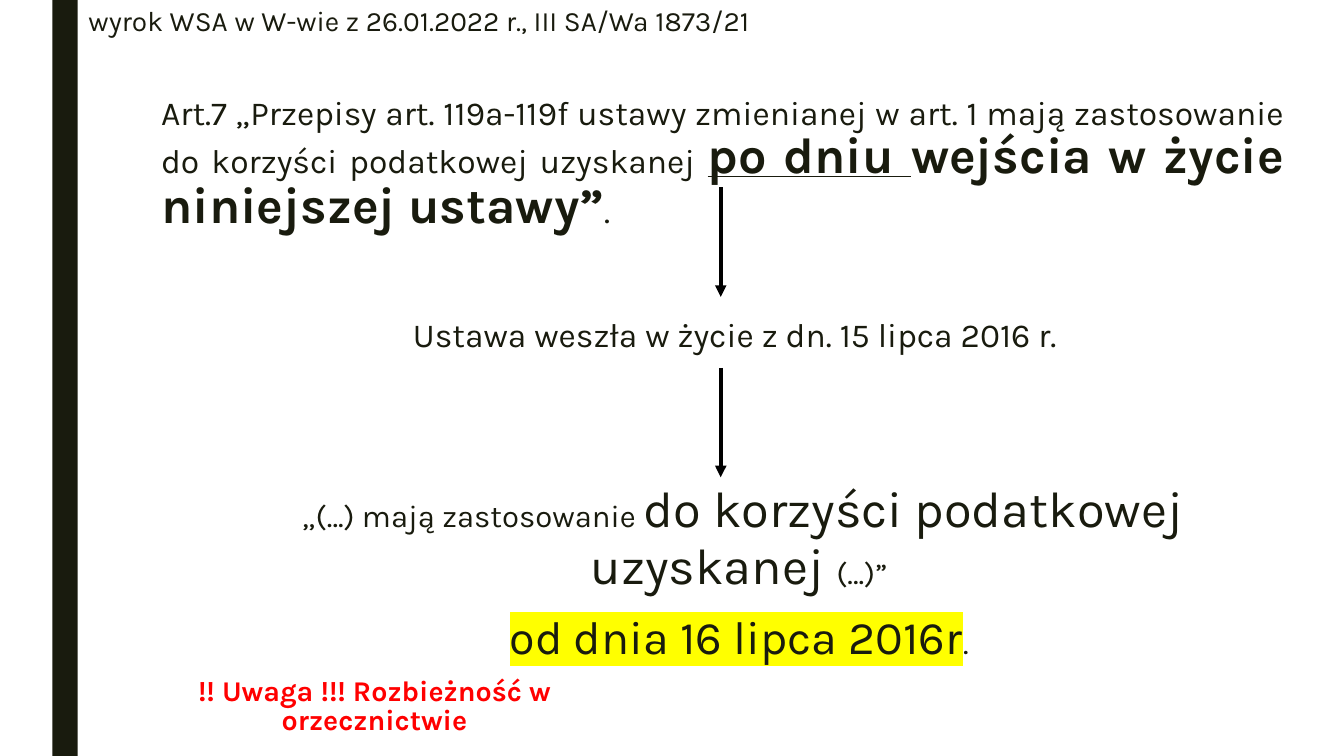
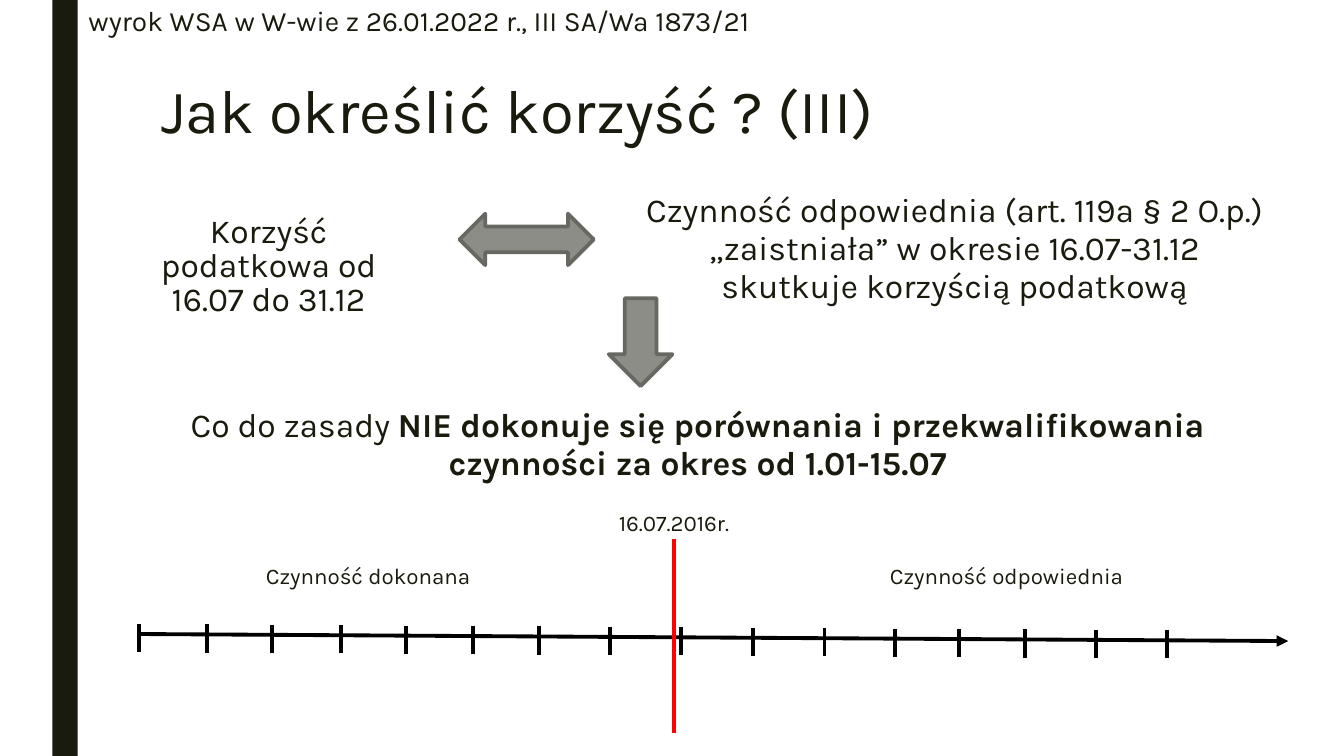
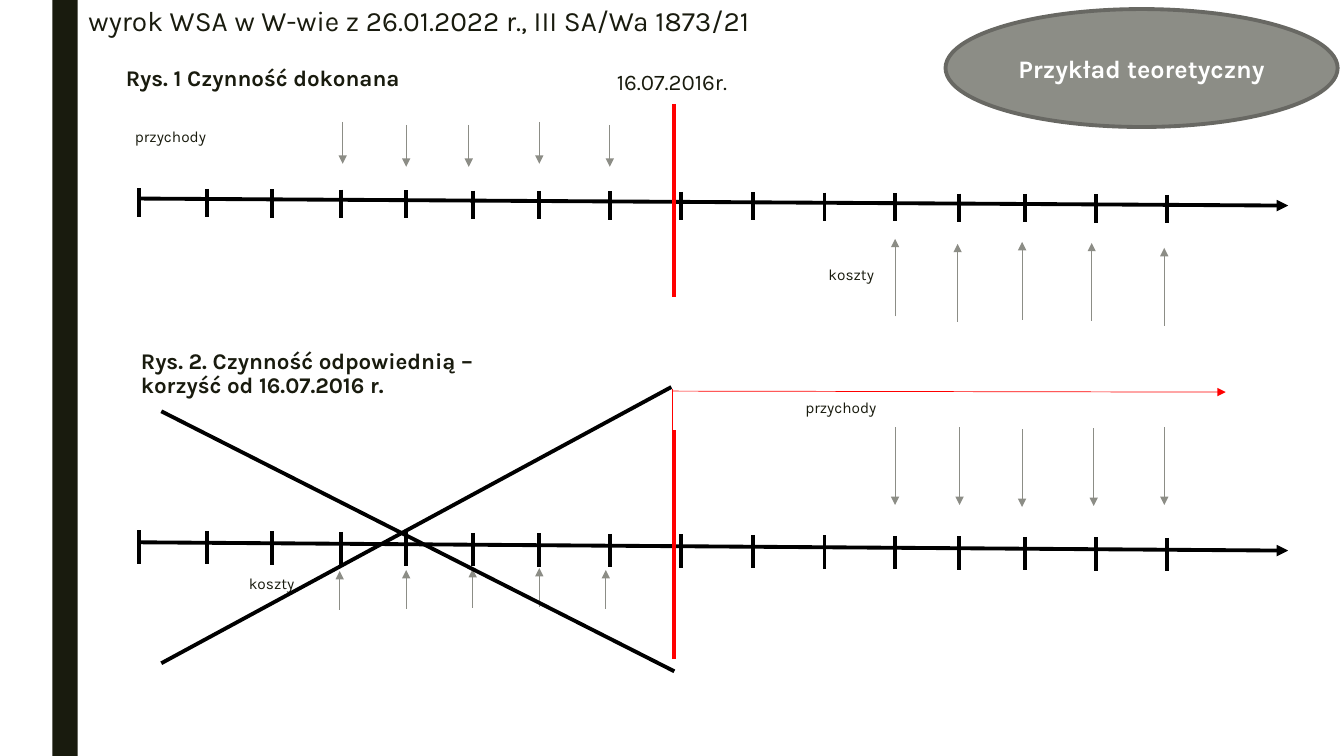
from lxml import etree
from pptx import Presentation, util as u
from pptx.dml.color import RGBColor
from pptx.enum import shapes, text
from pptx.oxml import ns

COLORS = {
    "ink": "191B0E",
    "black": "000000",
    "red": "FF0000",
    "white": "FFFFFF",
    "gray": "8C8D86",
    "outline": "686863",
    "marker": "FFFF00",
}
FONT = "Karla"
GRID = u.Inches(0.1)  # the slide measures 133.33 columns by 75 rows
COLUMNS, ROWS = 133.33, 75
THICK, THIN = 2.75, 0.5
PARAGRAPHS = {
    "body": {"line_spacing": 0.94, "space_before": u.Pt(10), "space_after": u.Pt(2)},
    "tight": {"line_spacing": 0.84, "space_before": u.Pt(10), "space_after": u.Pt(2)},
    "heading": {"line_spacing": 0.89},
    "badge": {},
}
CENTER, JUSTIFY = text.PP_ALIGN.CENTER, text.PP_ALIGN.JUSTIFY
MONTHS = [13.8, 20.5, 27, 33.8, 40.3, 46.9, 53.5, 60.5,
          67.6, 74.7, 81.8, 88.8, 95.1, 101.7, 108.7, 115.8]
AXIS_START, AXIS_END, ENTRY_DATE = 13.8, 127.8, 66.9
RULING = "wyrok WSA w W-wie z 26.01.2022 r., III SA/Wa 1873/21"
DATE = "16.07.2016r."


def rgb(name):
    return RGBColor.from_string(COLORS[name])


def cells(*values):
    return [round(value * GRID) for value in values]


def set_all(target, formats):
    for name, value in formats.items():
        setattr(target, name, value)


class Deck:
    def __init__(self):
        self.prs = Presentation()
        self.prs.slide_width, self.prs.slide_height = cells(COLUMNS, ROWS)
        self.slide = None

    def new_slide(self):
        """Start a slide with the side band and the ruling on top."""
        self.slide = self.prs.slides.add_slide(self.prs.slide_layouts[6])
        self.shape("RECTANGLE", (5.2, 0, 2.5, ROWS), "ink")
        self.text((7.8, 0.1, 105, 39.2), [(RULING, 20)])

    def shape(self, kind, box, fill, outline=None):
        shape = self.slide.shapes.add_shape(
            getattr(shapes.MSO_SHAPE, kind), *cells(*box))
        shape.shadow.inherit = False
        shape.fill.solid()
        shape.fill.fore_color.rgb = rgb(fill)
        if outline:
            shape.line.color.rgb = rgb(outline)
            shape.line.width = u.Pt(THICK)
        else:
            shape.line.fill.background()
        return shape

    def text(self, box, *paragraphs, style="body", align=None, color="ink"):
        """Place paragraphs, each a list of (words, size, optional font formats)."""
        frame = self.slide.shapes.add_textbox(*cells(*box)).text_frame
        frame.word_wrap = True
        self.add_words(frame, paragraphs, style, align, color)

    def add_words(self, frame, paragraphs, style, align, color):
        for index, runs in enumerate(paragraphs):
            paragraph = frame.add_paragraph() if index else frame.paragraphs[0]
            paragraph.alignment = align
            set_all(paragraph, PARAGRAPHS[style])
            for words, size, *formats in runs:
                run = paragraph.add_run()
                run.text = words
                run.font.color.rgb = rgb(color)
                formats = dict(formats[0]) if formats else {}
                marker = formats.pop("marker", None)
                set_all(run.font, {"name": FONT, "size": u.Pt(size), **formats})
                if marker:
                    self.highlight(run, marker)

    def highlight(self, run, color):
        mark = etree.Element(ns.qn("a:highlight"))
        etree.SubElement(mark, ns.qn("a:srgbClr"), val=COLORS[color])
        run.font._element.find(ns.qn("a:solidFill")).addnext(mark)

    def line(self, start, end, color="black", width=THICK, arrow=False):
        line = self.slide.shapes.add_connector(
            shapes.MSO_CONNECTOR.STRAIGHT, *cells(*start, *end))
        line.line.color.rgb = rgb(color)
        line.line.width = u.Pt(width)
        properties = line._element.spPr
        if arrow:
            outline = properties.find(ns.qn("a:ln"))
            etree.SubElement(outline, ns.qn("a:tailEnd"), type="triangle")
        etree.SubElement(properties, ns.qn("a:effectLst"))

    def flows(self, starts, length):
        """Draw thin vertical arrows; a negative length points up."""
        for x, y in starts:
            self.line((x, y), (x, y + length), "gray", THIN, arrow=True)

    def timeline(self, top, scale=1):
        """Draw a slightly falling axis with month ticks and the red entry date."""
        fall = 0.7 * scale
        self.line((AXIS_START, top), (AXIS_END, top + fall), arrow=True)
        for x in MONTHS:
            y = top + fall * (x - AXIS_START) / (AXIS_END - AXIS_START)
            self.line((x, y - scale), (x, y + 1.8 * scale))
        self.line((ENTRY_DATE, top - 9.4 * scale), (ENTRY_DATE, top + 9.8 * scale), "red")

    def caption(self, x, y, words):
        self.text((x, y, 11.5, 3.4), [(words, 11), (" ", 16)], style="heading")

    def heading(self, x, y, words, **formats):
        self.text((x, y, 29.2, 16.2), [(words, 16, formats), (" ", 44)], style="heading")


def entry_into_force(deck):
    bold = {"bold": True}
    deck.new_slide()
    deck.text((15, 9.3, 113.4, 15),
              [("Art.7 „Przepisy art. 119a-119f ustawy zmienianej w art. 1 mają "
                "zastosowanie do korzyści podatkowej uzyskanej ", 24),
               ("po dniu ", 36, {"bold": True, "underline": True}),
               ("wejścia w życie niniejszej ustawy”", 36, bold),
               (".", 24)], style="tight", align=JUSTIFY)
    deck.text((16.6, 31, 113.4, 5.6),
              [("Ustawa weszła w życie z dn. 15 lipca 2016 r. ", 24)], align=CENTER)
    deck.text((17.4, 47.3, 112.6, 14.1),
              [("„(…) mają zastosowanie ", 22.2),
               ("do korzyści podatkowej uzyskanej ", 36.1), ("(…)” ", 22.2)],
              [("od dnia 16 lipca 2016r", 33.3, {"marker": "marker"}), (". ", 22.2)],
              align=CENTER)
    deck.text((10.3, 66.8, 53.7, 5.6),
              [("!! Uwaga !!! Rozbieżność w orzecznictwie", 20.4, bold)],
              style="tight", align=CENTER, color="red")
    for top in (18.6, 36.5):
        deck.line((71.5, top), (71.5, top + 10.85), arrow=True)


def determining_benefit(deck):
    deck.new_slide()
    deck.text((15, 7.5, 105, 16.2), [("Jak określić korzyść ? (III) ", 44)], style="heading")
    deck.text((11.1, 21, 31.1, 8.7), [("Korzyść podatkowa od 16.07 do 31.12", 24)],
              style="tight", align=CENTER)
    deck.shape("LEFT_RIGHT_ARROW", (45.6, 21.2, 13.3, 5.1), "gray", "outline")
    deck.text((62.3, 18.6, 64.8, 12.9),
              [("Czynność odpowiednia (art. 119a § 2 O.p.) „zaistniała” w okresie "
                "16.07-31.12 skutkuje korzyścią podatkową", 24)], align=CENTER)
    deck.shape("DOWN_ARROW", (60.4, 29.6, 6.3, 8.7), "gray", "outline")
    deck.text((16.7, 39.9, 105, 12.9),
              [("Co do zasady ", 24),
               ("NIE dokonuje się porównania i przekwalifikowania czynności "
                "za okres od 1.01-15.07", 24, {"bold": True})], align=CENTER)
    deck.timeline(62.9)
    deck.text((60.4, 50.2, 19.9, 6.2), [(DATE, 16)])
    deck.heading(25.4, 52.3, "Czynność dokonana")
    deck.heading(87.3, 52.3, "Czynność odpowiednia")


def theoretical_example(deck):
    deck.new_slide()
    deck.heading(11.5, 2.9, "Rys. 1 Czynność dokonana", bold=True)
    deck.text((60.2, 6.5, 19.9, 6.2), [(DATE, 16)])
    deck.timeline(19.7)
    deck.flows([(34, 12.1), (40.3, 12.4), (46.5, 12.4), (53.5, 12.1), (60.5, 12.4)], 4.15)
    deck.flows([(88.8, 31.4), (95, 31.9), (101.4, 31.7), (108.3, 31.8), (115.5, 32.3)], -7.7)
    deck.caption(12.4, 11.8, "przychody")
    deck.caption(81.2, 25.4, "koszty")

    deck.timeline(53.8, 1.18)
    deck.text((13, 34.3, 36.6, 16.2),
              [("Rys. 2. Czynność odpowiednią – korzyść od 16.07.2016 r.", 16, {"bold": True})],
              style="heading")
    deck.flows([(88.8, 42.4), (95.2, 42.4), (101.4, 42.6), (108.5, 42.5), (115.5, 42.4)], 7.7)
    deck.flows([(33.7, 60.5), (40.3, 60.4), (46.9, 60.3), (53.5, 60.2), (60.1, 60.4)], -3.85)
    deck.caption(78.9, 38.6, "przychody")
    deck.caption(23.7, 56.1, "koszty")
    deck.line((66.7, 51.7), (66.7, 38.6), "red", THIN)
    deck.line((66.7, 38.8), (121.6, 38.9), "red", THIN, arrow=True)
    deck.line((16, 40.8), (66.9, 66.6))
    deck.line((16, 65.8), (66.6, 38.4))

    badge = deck.shape("OVAL", (93.8, 0.9, 38.9, 11.7), "gray", "outline")
    badge.text_frame.vertical_anchor = text.MSO_ANCHOR.MIDDLE
    deck.add_words(badge.text_frame, [[("Przykład teoretyczny", 18, {"bold": True})]],
                   "badge", CENTER, "white")


def main():
    deck = Deck()
    for build in (entry_into_force, determining_benefit, theoretical_example):
        build(deck)
    deck.prs.save("out.pptx")


if __name__ == "__main__":
    main()
